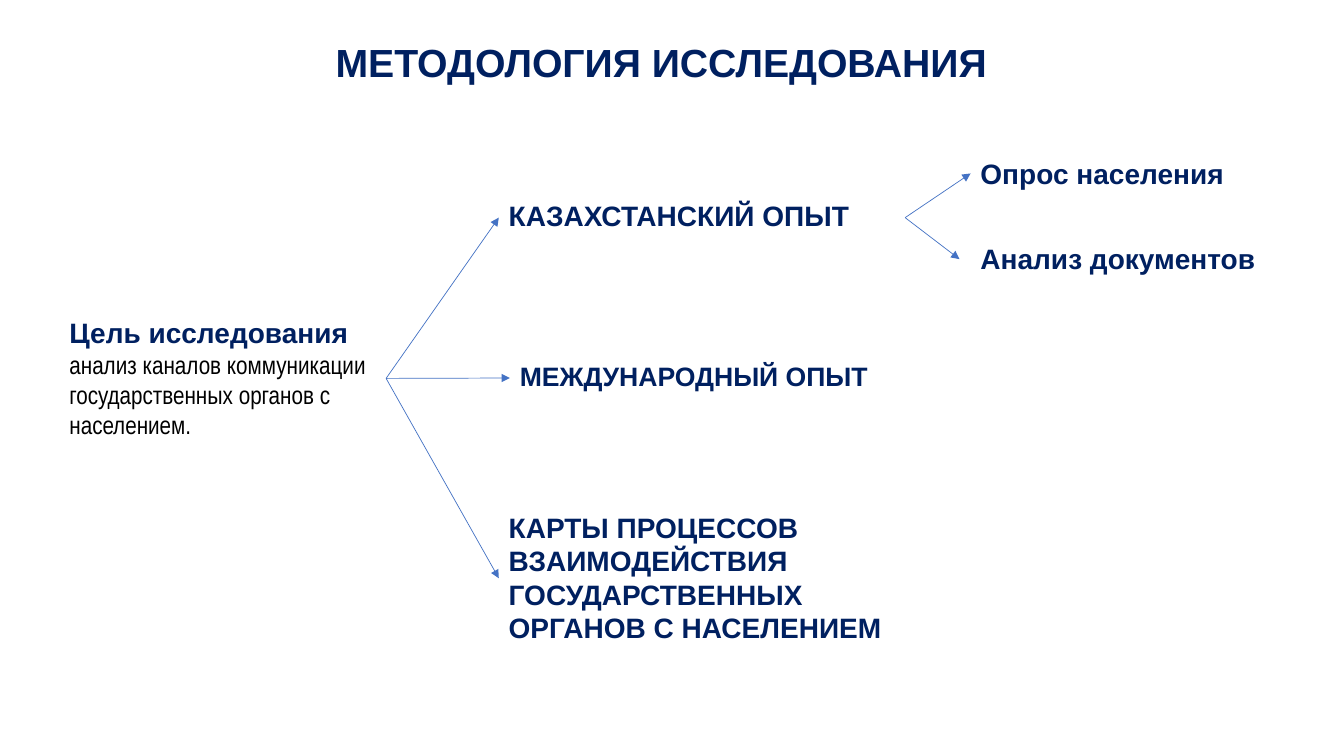
from dataclasses import dataclass

import pptx
import pptx.dml.color
import pptx.enum.shapes
import pptx.enum.text
import pptx.oxml
import pptx.oxml.ns
import pptx.slide
import pptx.util
from pptx.util import Cm

NAVY = pptx.dml.color.RGBColor(0x00, 0x20, 0x60)
BLACK = pptx.dml.color.RGBColor(0x00, 0x00, 0x00)
BLUE = pptx.dml.color.RGBColor(0x44, 0x72, 0xC4)

Align = pptx.enum.text.PP_ALIGN
Anchor = pptx.enum.text.MSO_ANCHOR


@dataclass(frozen=True)
class Run:
    text: str
    size: float = 20
    font: str = "Arial"
    color: pptx.dml.color.RGBColor = NAVY
    bold: bool = True


@dataclass(frozen=True)
class Box:
    """A place on the slide, in centimetres."""
    left: float
    top: float
    width: float
    height: float

    @property
    def right(self) -> float:
        return self.left + self.width

    @property
    def middle(self) -> float:
        return self.top + self.height / 2


@dataclass(frozen=True)
class Branch:
    """An arrow from the right of one box to the left of another."""
    source: Box
    target: Box
    gap: float = 0


TITLE = Box(2.64, 0.84, 28.04, 1.45)
GOAL = Box(1.5, 7.82, 8.23, 3.43)
KAZAKH = Box(12.57, 4.85, 10.24, 1.27)
WORLD = Box(12.85, 8.99, 10.24, 1.07)
MAPS = Box(12.57, 12.73, 10.57, 3.68)
SURVEY = Box(24.46, 3.81, 8.23, 1.12)
DOCUMENTS = Box(24.46, 5.97, 8.23, 1.12)

BRANCHES = [
    Branch(GOAL, KAZAKH),
    Branch(GOAL, WORLD),
    Branch(GOAL, MAPS),
    Branch(KAZAKH, SURVEY),
    Branch(KAZAKH, DOCUMENTS, gap=0.28),
]


def add_text(slide: pptx.slide.Slide, box: Box, *runs: Run,
             align: Align = Align.LEFT, anchor: Anchor = Anchor.TOP,
             line_spacing: float = 1.0) -> None:
    frame = slide.shapes.add_textbox(
        Cm(box.left), Cm(box.top), Cm(box.width), Cm(box.height)).text_frame
    frame.word_wrap = True
    frame.vertical_anchor = anchor
    paragraph = frame.paragraphs[0]
    paragraph.alignment = align
    paragraph.line_spacing = line_spacing
    for run in runs:
        piece = paragraph.add_run()
        piece.text = run.text
        piece.font.size = pptx.util.Pt(run.size)
        piece.font.name = run.font
        piece.font.bold = run.bold
        piece.font.color.rgb = run.color


def add_arrow(slide: pptx.slide.Slide, branch: Branch) -> None:
    arrow = slide.shapes.add_connector(
        pptx.enum.shapes.MSO_CONNECTOR.STRAIGHT,
        Cm(branch.source.right), Cm(branch.source.middle),
        Cm(branch.target.left - branch.gap), Cm(branch.target.middle))
    arrow.line.color.rgb = BLUE
    arrow.line.width = pptx.util.Pt(0.5)
    namespace = pptx.oxml.ns.nsdecls("a")
    arrow.line._get_or_add_ln().append(
        pptx.oxml.parse_xml(f'<a:tailEnd {namespace} type="triangle"/>'))
    arrow._element.spPr.append(
        pptx.oxml.parse_xml(f"<a:effectLst {namespace}/>"))


def main() -> None:
    deck = pptx.Presentation()
    deck.slide_width, deck.slide_height = Cm(33.87), Cm(19.05)
    slide = deck.slides.add_slide(deck.slide_layouts[6])

    add_text(slide, TITLE, Run("МЕТОДОЛОГИЯ ИССЛЕДОВАНИЯ", size=28),
             align=Align.CENTER)
    add_text(slide, GOAL, Run("Цель исследования "),
             Run("анализ каналов коммуникации государственных органов "
                 "с населением.",
                 size=18, font="Arial Narrow", color=BLACK, bold=False))
    add_text(slide, KAZAKH, Run("КАЗАХСТАНСКИЙ ОПЫТ"),
             anchor=Anchor.MIDDLE, line_spacing=0.9)
    add_text(slide, WORLD, Run("МЕЖДУНАРОДНЫЙ ОПЫТ", size=19),
             anchor=Anchor.MIDDLE, line_spacing=0.9)
    add_text(slide, MAPS, Run("КАРТЫ ПРОЦЕССОВ ВЗАИМОДЕЙСТВИЯ "
                              "ГОСУДАРСТВЕННЫХ ОРГАНОВ С НАСЕЛЕНИЕМ"))
    add_text(slide, SURVEY, Run("Опрос населения"))
    add_text(slide, DOCUMENTS, Run("Анализ документов"))

    for branch in BRANCHES:
        add_arrow(slide, branch)

    deck.save("out.pptx")


if __name__ == "__main__":
    main()
